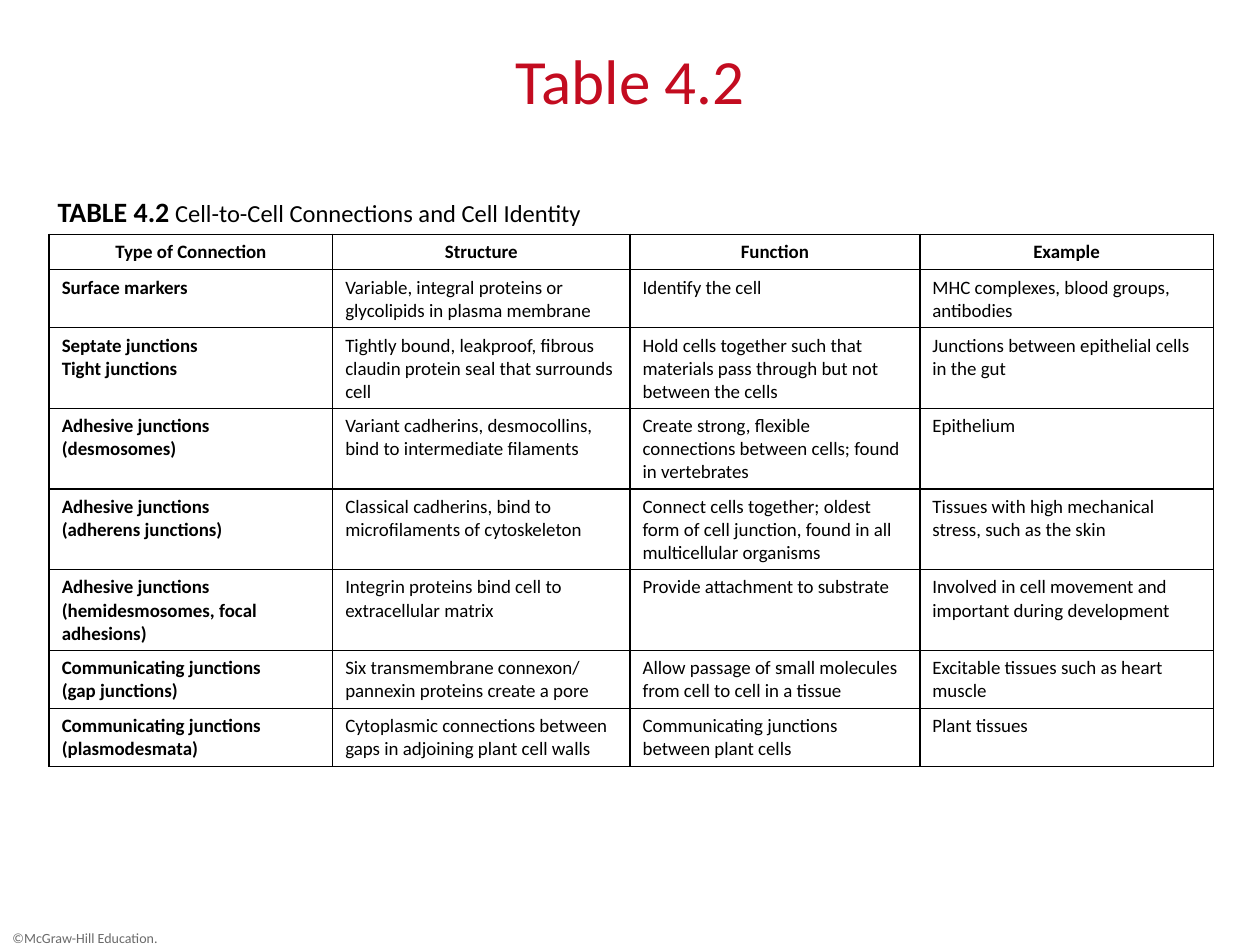
from lxml import etree
from pptx import Presentation, util as u
from pptx.dml.color import RGBColor
from pptx.enum import text
from pptx.oxml.ns import qn

RED = RGBColor(0xC3, 0x0C, 0x20)
BLACK = RGBColor(0, 0, 0)
GREY = RGBColor(0x6A, 0x6A, 0x6A)
FONT = "Calibri"
CELL_SIZE = 10.8

TITLE = "Table 4.2"
CAPTION = [("TABLE 4.2", 16, True), (" ", 14, True),
           ("Cell-to-Cell Connections and Cell Identity", 14, False)]
COPYRIGHT = "©McGraw-Hill Education."
HEADER = ("Type of Connection", "Structure", "Function", "Example")
# A line break inside a cell starts a new paragraph.
CONNECTIONS = [
    ("Surface markers",
     "Variable, integral proteins or\nglycolipids in plasma membrane",
     "Identify the cell",
     "MHC complexes, blood groups,\nantibodies"),
    ("Septate junctions\nTight junctions",
     "Tightly bound, leakproof, fibrous claudin protein seal that surrounds cell",
     "Hold cells together such that materials pass through but not between the cells",
     "Junctions between epithelial cells in the gut"),
    ("Adhesive junctions\n(desmosomes)",
     "Variant cadherins, desmocollins,\nbind to intermediate filaments",
     "Create strong, flexible connections between cells; found in vertebrates",
     "Epithelium"),
    ("Adhesive junctions\n(adherens junctions)",
     "Classical cadherins, bind to\nmicrofilaments of cytoskeleton",
     "Connect cells together; oldest form of cell junction, found in all multicellular organisms",
     "Tissues with high mechanical stress, such as the skin"),
    ("Adhesive junctions\n(hemidesmosomes, focal adhesions)",
     "Integrin proteins bind cell to\nextracellular matrix",
     "Provide attachment to substrate",
     "Involved in cell movement and\nimportant during development"),
    ("Communicating junctions\n(gap junctions)",
     "Six transmembrane connexon/\npannexin proteins create a pore",
     "Allow passage of small molecules from cell to cell in a tissue",
     "Excitable tissues such as heart muscle"),
    ("Communicating junctions\n(plasmodesmata)",
     "Cytoplasmic connections between gaps in adjoining plant cell walls",
     "Communicating junctions between plant cells",
     "Plant tissues"),
]
COLUMN_WIDTHS = (2.25, 2.36, 2.3, 2.33)
ROW_HEIGHTS = (0.25, 0.4, 0.56, 0.56, 0.56, 0.56, 0.4, 0.43)


def inches(*lengths):
    return [u.Inches(length) for length in lengths]


def add_run(para, words, size, color, bold=False):
    span = para.add_run()
    span.text = words
    font = span.font
    font.name, font.size, font.bold = FONT, u.Pt(size), bold
    font.color.rgb = color


def add_text_box(page, place, runs, color, anchor):
    frame = page.shapes.add_textbox(*inches(*place)).text_frame
    frame.word_wrap = True
    frame.vertical_anchor = anchor
    for words, size, bold in runs:
        add_run(frame.paragraphs[0], words, size, color, bold)


def add_borders(cell, width=1):
    properties = cell._tc.get_or_add_tcPr()
    for position, side in enumerate(("a:lnL", "a:lnR", "a:lnT", "a:lnB")):
        line = etree.Element(qn(side), w=str(u.Pt(width)))
        fill = etree.SubElement(line, qn("a:solidFill"))
        etree.SubElement(fill, qn("a:srgbClr"), val=str(BLACK))
        properties.insert(position, line)


def fill_cell(cell, words, bold, align):
    cell.fill.background()
    add_borders(cell)
    frame = cell.text_frame
    for index, line in enumerate(words.split("\n")):
        para = frame.add_paragraph() if index else frame.paragraphs[0]
        para.alignment = align
        add_run(para, line, CELL_SIZE, BLACK, bold)


def add_connection_table(page):
    rows = [HEADER] + CONNECTIONS
    place = inches(0.39, 1.86, sum(COLUMN_WIDTHS), sum(ROW_HEIGHTS))
    table = page.shapes.add_table(len(rows), len(HEADER), *place).table
    table.first_row = table.horz_banding = False
    for column, width in zip(table.columns, COLUMN_WIDTHS):
        column.width = u.Inches(width)
    for r, (row, height) in enumerate(zip(rows, ROW_HEIGHTS)):
        table.rows[r].height = u.Inches(height)
        align = text.PP_ALIGN.LEFT if r else text.PP_ALIGN.CENTER
        for c, words in enumerate(row):
            fill_cell(table.cell(r, c), words, r == 0 or c == 0, align)


def format_title(title):
    title.left, title.top, title.width, title.height = inches(0, 0.25, 10, 0.67)
    frame = title.text_frame
    frame.auto_size = text.MSO_AUTO_SIZE.NONE
    frame.vertical_anchor = text.MSO_ANCHOR.TOP
    frame.margin_top = u.Inches(0.08)
    para = frame.paragraphs[0]
    para.alignment = text.PP_ALIGN.CENTER
    add_run(para, TITLE, 36, RED)


def main():
    deck = Presentation()
    deck.slide_width, deck.slide_height = inches(10, 7.5)
    page = deck.slides.add_slide(deck.slide_layouts[5])
    add_text_box(page, (0, 7.33, 1.5, 0.17), [(COPYRIGHT, 8, False)], GREY,
                 text.MSO_ANCHOR.TOP)
    format_title(page.shapes.title)
    add_text_box(page, (0.36, 1.47, 9.25, 0.42), CAPTION, BLACK,
                 text.MSO_ANCHOR.MIDDLE)
    add_connection_table(page)
    deck.save("out.pptx")


if __name__ == "__main__":
    main()
